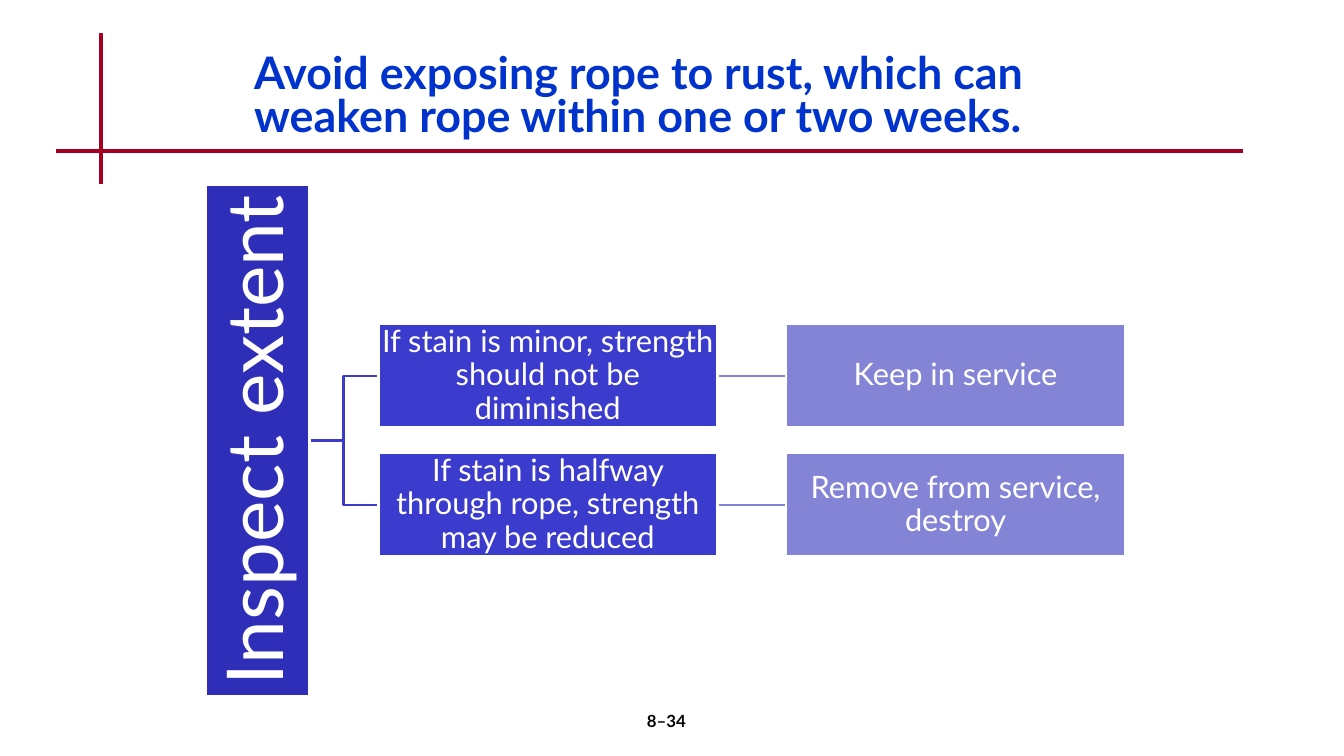
from pptx import Presentation
from pptx.dml.color import RGBColor
from pptx.enum.shapes import MSO_CONNECTOR, MSO_SHAPE
from pptx.enum.text import MSO_ANCHOR, MSO_AUTO_SIZE, PP_ALIGN
from pptx.util import Pt
from lxml.etree import SubElement
from pptx.oxml.ns import qn

SCALE = 9144
FONT = "Lato"
COLORS = {
    "rule": "A50021",
    "title": "0033CC",
    "trunk": "2E2EB9",
    "finding": "3B3BCD",
    "action": "8484D7",
    "white": "FFFFFF",
    "black": "000000",
}
BRANCHES = [
    ("If stain is minor, strength should not be diminished", "Keep in service"),
    ("If stain is halfway through rope, strength may be reduced",
     "Remove from service, destroy"),
]


def px(n):
    return round(n * SCALE)


def rgb(name):
    return RGBColor.from_string(COLORS[name])


def write(tf, text, size, color, align, spacing=1.0, bold=False):
    tf.word_wrap = True
    tf.auto_size = MSO_AUTO_SIZE.NONE
    tf.text = text
    p = tf.paragraphs[0]
    p.alignment = align
    p.line_spacing = spacing
    font = p.runs[0].font
    font.name, font.size, font.bold = FONT, Pt(size), bold
    font.color.rgb = rgb(color)


def add_line(s, x1, y1, x2, y2, color, width):
    line = s.shapes.add_connector(
        MSO_CONNECTOR.STRAIGHT, px(x1), px(y1), px(x2), px(y2))
    line.line.color.rgb = rgb(color)
    line.line.width = Pt(width)
    SubElement(line._element.spPr, qn("a:effectLst"))
    return line


def add_elbow(s, x1, y1, x2, y2):
    mid = (x1 + x2) / 2
    builder = s.shapes.build_freeform(px(x1), px(y1))
    builder.add_line_segments(
        [(px(x), px(y)) for x, y in ((mid, y1), (mid, y2), (x2, y2))], close=False)
    sp = builder.convert_to_shape()
    sp.shadow.inherit = False
    sp.fill.background()
    sp.line.color.rgb = rgb("finding")
    sp.line.width = Pt(2)


def add_box(s, x, y, w, h, text, color, size=22, inset=2):
    sp = s.shapes.add_shape(MSO_SHAPE.RECTANGLE, px(x), px(y), px(w), px(h))
    sp.shadow.inherit = False
    sp.fill.solid()
    sp.fill.fore_color.rgb = rgb(color)
    sp.line.color.rgb = rgb("white")
    sp.line.width = Pt(2)
    tf = sp.text_frame
    tf.margin_left = tf.margin_right = tf.margin_top = tf.margin_bottom = px(inset)
    tf.vertical_anchor = MSO_ANCHOR.MIDDLE
    write(tf, text, size, "white", PP_ALIGN.CENTER, 0.9)
    return sp


def add_header(s, x, y, w, h):
    add_line(s, x + 44, y, x + 44, y + h, "rule", 3)
    add_line(s, x, y + 117, x + w, y + 117, "rule", 3)
    title = s.shapes.title
    title.left, title.top = px(x + 186), px(y + 17)
    title.width, title.height = px(925), px(100)
    title.text_frame.vertical_anchor = MSO_ANCHOR.TOP
    write(title.text_frame, "Avoid exposing rope to rust, which can weaken rope "
          "within one or two weeks.", 32, "title", PP_ALIGN.LEFT, 0.8, True)


def add_tree(s, x, y, w, h):
    box_h, row_gap, col_gap = 103, 25, 68
    box_w = (w - box_h - 2 * col_gap) / 2
    finding_x = x + box_h + col_gap
    action_x = finding_x + box_w + col_gap
    middle = y + h / 2
    pitch = box_h + row_gap
    first = middle - pitch * (len(BRANCHES) - 1) / 2
    centers = [first + i * pitch for i in range(len(BRANCHES))]

    links = []
    for cy in centers:
        add_elbow(s, x + box_h, middle, finding_x, cy)
        links.append(add_line(s, finding_x + box_w, cy, action_x, cy, "action", 2))

    trunk = add_box(s, x + (box_h - h) / 2, middle - box_h / 2, h, box_h,
                    "Inspect extent", "trunk", 56, 4)
    trunk.rotation = 270
    for cy, link, (finding, action) in zip(centers, links, BRANCHES):
        top = cy - box_h / 2
        left_box = add_box(s, finding_x, top, box_w, box_h, finding, "finding")
        right_box = add_box(s, action_x, top, box_w, box_h, action, "action")
        link.begin_connect(left_box, 3)
        link.end_connect(right_box, 1)


def add_page_number(s, x, y, w, h):
    tb = s.shapes.add_textbox(px(x), px(y), px(w), px(h))
    write(tb.text_frame, "8–34", 12, "black", PP_ALIGN.CENTER, bold=True)


def main():
    prs = Presentation()
    prs.slide_width, prs.slide_height = px(1333), px(750)
    s = prs.slides.add_slide(prs.slide_layouts[5])
    add_header(s, 56, 33, 1177, 150)
    add_tree(s, 204, 183, 912, 508)
    add_page_number(s, 522, 700, 278, 50)
    prs.save("out.pptx")


if __name__ == "__main__":
    main()
